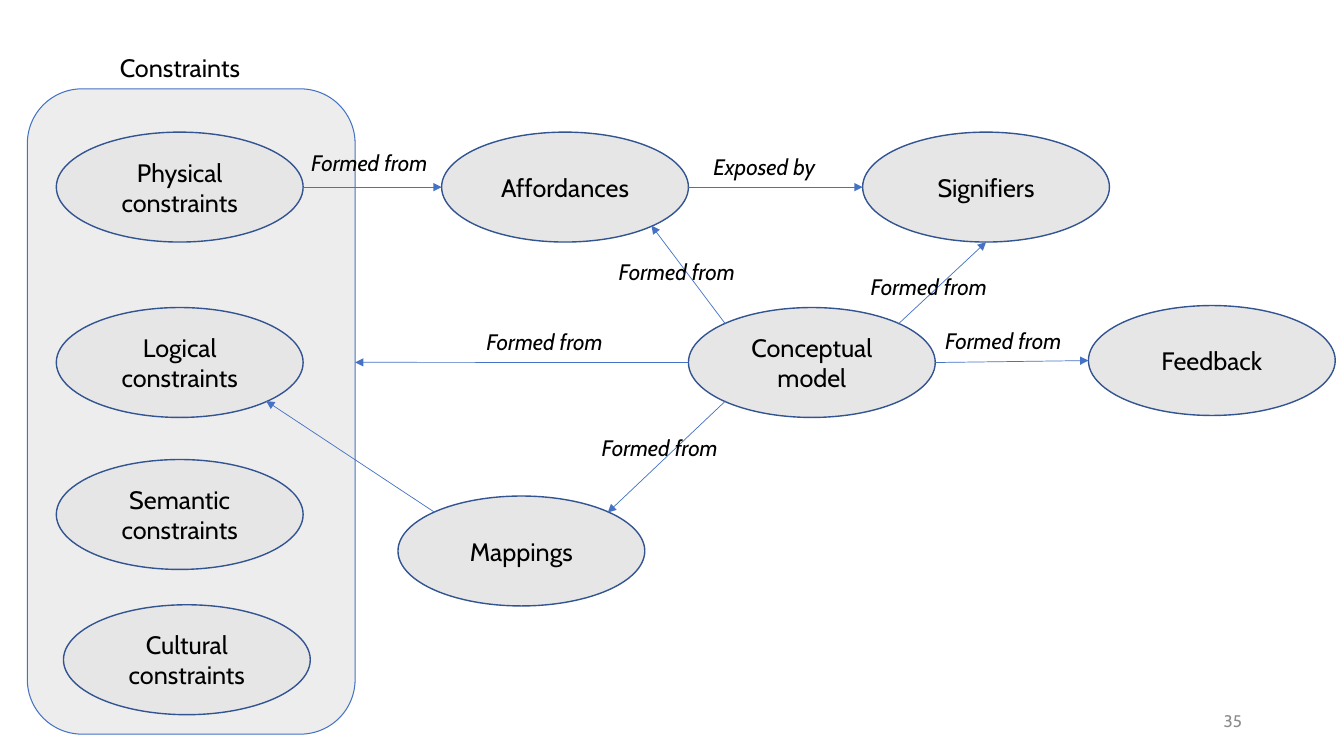
from lxml import etree
from pptx import Presentation
from pptx.dml.color import RGBColor
from pptx.enum.shapes import MSO_CONNECTOR as Connector, MSO_SHAPE as Shape
from pptx.enum.text import MSO_ANCHOR as Anchor, PP_ALIGN as Align
from pptx.oxml.ns import qn
from pptx.util import Cm, Pt

COLORS = {"panel": "EDEDED", "node": "E7E6E6", "outline": "325491",
          "line": "4472C4", "text": "000000", "number": "8C8C8C"}
NODE_WIDTH, NODE_HEIGHT = 6.22, 2.77


def add_block(preset, left, top, width, height, fill, line, line_width):
    shape = slide.shapes.add_shape(preset, Cm(left), Cm(top), Cm(width), Cm(height))
    shape.shadow.inherit = False
    shape.fill.solid()
    shape.fill.fore_color.rgb = RGBColor.from_string(COLORS[fill])
    shape.line.color.rgb = RGBColor.from_string(COLORS[line])
    shape.line.width = Pt(line_width)
    return shape


def write_text(shape, text, size, color="text", align=Align.LEFT, italic=False):
    frame = shape.text_frame
    frame.word_wrap = True
    frame.text = text
    paragraph = frame.paragraphs[0]
    paragraph.alignment = align
    paragraph.font.name = "Cabin"
    paragraph.font.size = Pt(size)
    paragraph.font.italic = italic
    paragraph.font.color.rgb = RGBColor.from_string(COLORS[color])


presentation = Presentation()
presentation.slide_width, presentation.slide_height = Cm(33.87), Cm(19.05)
slide = presentation.slides.add_slide(presentation.slide_layouts[6])

# Panel behind the constraints
add_block(Shape.ROUNDED_RECTANGLE, 0.69, 2.24, 8.26, 16.26, "panel", "line", 0.75)

# Concepts: left and top of each ellipse
nodes = {
    "Physical constraints": (1.42, 3.33),
    "Logical constraints": (1.42, 7.75),
    "Semantic constraints": (1.42, 11.58),
    "Cultural constraints": (1.6, 15.24),
    "Affordances": (11.13, 3.33),
    "Signifiers": (21.74, 3.33),
    "Mappings": (10.03, 12.5),
    "Feedback": (27.43, 7.7),
    "Conceptual model": (17.35, 7.75),
}
for name, (left, top) in nodes.items():
    ellipse = add_block(Shape.OVAL, left, top, NODE_WIDTH, NODE_HEIGHT, "node", "outline", 1)
    write_text(ellipse, name, 18, align=Align.CENTER)
    ellipse.text_frame.vertical_anchor = Anchor.MIDDLE

# Points on an ellipse, as shares of its width and height
sites = {"left": (0, 0.5), "right": (1, 0.5), "bottom": (0.5, 1),
         "top left": (0.15, 0.15), "top right": (0.85, 0.15),
         "bottom left": (0.15, 0.85), "bottom right": (0.85, 0.85)}
points = {(name, site): (left + x * NODE_WIDTH, top + y * NODE_HEIGHT)
          for name, (left, top) in nodes.items() for site, (x, y) in sites.items()}
points["Panel", "right"] = (8.95, 9.13)

# Arrows
arrows = [
    (("Physical constraints", "right"), ("Affordances", "left")),
    (("Affordances", "right"), ("Signifiers", "left")),
    (("Conceptual model", "top left"), ("Affordances", "bottom right")),
    (("Conceptual model", "top right"), ("Signifiers", "bottom")),
    (("Conceptual model", "right"), ("Feedback", "left")),
    (("Conceptual model", "left"), ("Panel", "right")),
    (("Conceptual model", "bottom left"), ("Mappings", "top right")),
    (("Mappings", "top left"), ("Logical constraints", "bottom right")),
]
for start, end in arrows:
    ends = [Cm(value) for value in points[start] + points[end]]
    arrow = slide.shapes.add_connector(Connector.STRAIGHT, *ends)
    arrow.line.color.rgb = RGBColor.from_string(COLORS["line"])
    arrow.line.width = Pt(0.5)
    etree.SubElement(arrow.line._get_or_add_ln(), qn("a:tailEnd"), type="triangle")
    etree.SubElement(arrow._element.spPr, qn("a:effectLst"))

# Arrow labels
labels = [
    ("Formed from", 7.59, 3.63), ("Exposed by", 17.73, 3.73),
    ("Formed from", 15.34, 6.38), ("Formed from", 21.69, 6.76),
    ("Formed from", 23.57, 8.13), ("Formed from", 12.01, 8.15),
    ("Formed from", 14.91, 10.82),
]
for text, left, top in labels:
    label = slide.shapes.add_textbox(Cm(left), Cm(top), Cm(3.76), Cm(0.94))
    write_text(label, text, 16, italic=True)

# Panel title and slide number
title = slide.shapes.add_textbox(Cm(2.77), Cm(1.19), Cm(3.86), Cm(1.02))
write_text(title, "Constraints", 18)
number = slide.shapes.add_textbox(Cm(23.93), Cm(17.65), Cm(7.62), Cm(1.02))
write_text(number, "35", 12, "number", Align.RIGHT)
number.text_frame.vertical_anchor = Anchor.MIDDLE

presentation.save("out.pptx")
